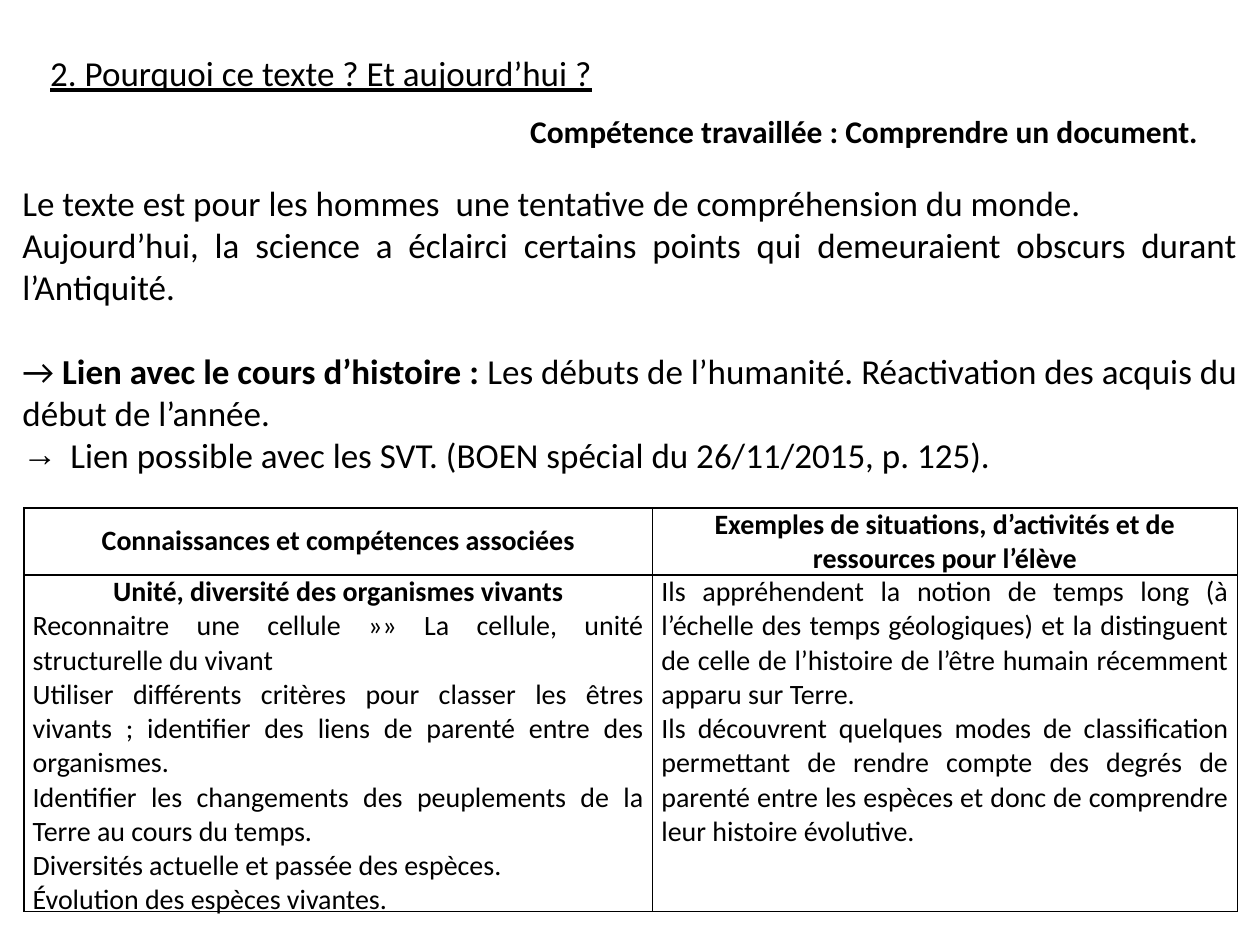
from lxml.etree import SubElement
from pptx import Presentation
from pptx.dml.color import RGBColor
from pptx.enum.text import MSO_ANCHOR, PP_ALIGN
from pptx.oxml import parse_xml
from pptx.oxml.ns import nsdecls, qn
from pptx.util import Inches, Pt

BLACK = RGBColor(0, 0, 0)
FONT = "Calibri"
LEFT, CENTER, RIGHT, JUSTIFY = (
    PP_ALIGN.LEFT, PP_ALIGN.CENTER, PP_ALIGN.RIGHT, PP_ALIGN.JUSTIFY)

# A paragraph is (alignment, runs); a run is (text, format values).
BOLD, PLAIN = {"bold": True}, {}
TITLE = [(LEFT, [("2. Pourquoi ce texte ? Et aujourd’hui ?", {"underline": True})])]
SKILL = [(RIGHT, [("Compétence travaillée : Comprendre un document.", BOLD)])]
BODY = [
    (JUSTIFY, [("Le texte est pour les hommes  une tentative de compréhension du monde.", PLAIN)]),
    (JUSTIFY, [("Aujourd’hui, la science a éclairci certains points qui demeuraient "
                "obscurs durant l’Antiquité.", PLAIN)]),
    (JUSTIFY, [("→ ", PLAIN), ("Lien avec le cours d’histoire :", BOLD),
               (" Les débuts de l’humanité. Réactivation des acquis du début de l’année.", PLAIN)]),
    (JUSTIFY, [("Lien possible avec les SVT. (BOEN spécial du 26/11/2015, p. 125).", PLAIN)]),
]
TEXT_BOXES = [  # left, top, width, height, size, paragraphs
    (0.3, 0.36, 4.84, 0.44, 20, TITLE),
    (3.98, 0.84, 5.63, 0.4, 18, SKILL),
    (0.08, 1.39, 9.84, 4.48, 20, BODY),
]

HEADERS = ["Connaissances et compétences associées",
           "Exemples de situations, d’activités et de ressources pour l’élève"]
KNOWLEDGE_TITLE = "Unité, diversité des organismes vivants"
KNOWLEDGE = [
    "Reconnaitre une cellule »» La cellule, unité structurelle du vivant",
    "Utiliser différents critères pour classer les êtres vivants ; identifier des "
    "liens de parenté entre des organismes.",
    "Identifier les changements des peuplements de la Terre au cours du temps.",
    "Diversités actuelle et passée des espèces.",
    "Évolution des espèces vivantes.",
]
EXAMPLES = [
    "Ils appréhendent la notion de temps long (à l’échelle des temps géologiques) et "
    "la distinguent de celle de l’histoire de l’être humain récemment apparu sur Terre.",
    "Ils découvrent quelques modes de classification permettant de rendre compte des "
    "degrés de parenté entre les espèces et donc de comprendre leur histoire évolutive.",
]


def heading(text):
    return (CENTER, [(text, BOLD)])


def justified(texts):
    return [(JUSTIFY, [(text, PLAIN)]) for text in texts]


ROWS = [
    [[heading(text)] for text in HEADERS],
    [[heading(KNOWLEDGE_TITLE)] + justified(KNOWLEDGE), justified(EXAMPLES)],
]
COL_WIDTHS = [4.99, 4.64]
ROW_HEIGHTS = [0.53, 2.67]


def write(tf, paragraphs, size):
    for i, (align, runs) in enumerate(paragraphs):
        p = tf.paragraphs[0] if i == 0 else tf.add_paragraph()
        p.alignment = align
        for text, style in runs:
            r = p.add_run()
            r.text = text
            r.font.color.rgb = BLACK
            for name, value in {"name": FONT, "size": Pt(size), **style}.items():
                setattr(r.font, name, value)


def add_arrow_bullet(p, indent):
    pPr = p._p.get_or_add_pPr()
    pPr.set("marL", str(Inches(indent)))
    pPr.set("indent", str(-Inches(indent)))
    SubElement(pPr, qn("a:buFont"), typeface="Arial")
    SubElement(pPr, qn("a:buChar"), char="→")


def add_borders(cell):
    tcPr = cell._tc.get_or_add_tcPr()
    for i, side in enumerate("LRTB"):
        tcPr.insert(i, parse_xml(
            f'<a:ln{side} {nsdecls("a")} w="{Pt(1)}"><a:solidFill>'
            f'<a:srgbClr val="{BLACK}"/></a:solidFill></a:ln{side}>'))


prs = Presentation()
prs.slide_width, prs.slide_height = Inches(10), Inches(7.5)
s = prs.slides.add_slide(prs.slide_layouts[6])

for *box, size, paragraphs in TEXT_BOXES:
    tf = s.shapes.add_textbox(*map(Inches, box)).text_frame
    tf.word_wrap = True
    write(tf, paragraphs, size)

*_, history, science = tf.paragraphs
history.space_before = Pt(24)
add_arrow_bullet(science, 0.38)

table = s.shapes.add_table(
    len(ROWS), len(COL_WIDTHS), Inches(0.19), Inches(4.03),
    Inches(sum(COL_WIDTHS)), Inches(sum(ROW_HEIGHTS))).table
for col, width in zip(table.columns, COL_WIDTHS):
    col.width = Inches(width)
for row, height, contents in zip(table.rows, ROW_HEIGHTS, ROWS):
    row.height = Inches(height)
    for cell, paragraphs in zip(row.cells, contents):
        cell.margin_left = cell.margin_right = Inches(0.07)
        cell.margin_top = cell.margin_bottom = 0
        cell.fill.background()
        add_borders(cell)
        write(cell.text_frame, paragraphs, 16)
table.cell(0, 0).vertical_anchor = MSO_ANCHOR.MIDDLE

prs.save("out.pptx")
